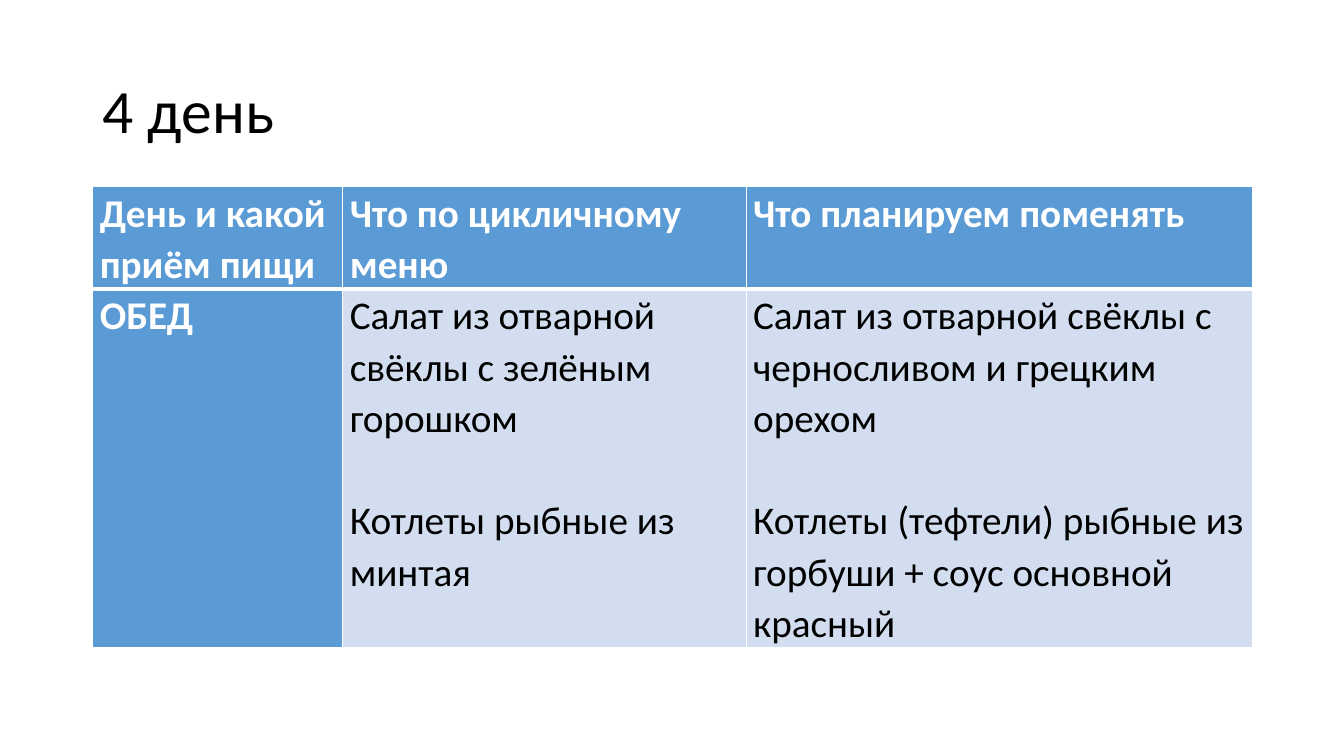
from lxml.etree import SubElement
from pptx import Presentation
from pptx.dml.color import RGBColor as RGB
from pptx.enum.text import MSO_ANCHOR as Anchor
from pptx.oxml.ns import qn
from pptx.util import Inches, Pt

TITLE = "4 день"
ROWS = [
    [["День и какой приём пищи"], ["Что по цикличному меню"], ["Что планируем поменять"]],
    [
        ["ОБЕД"],
        ["Салат из отварной свёклы с зелёным горошком", "Котлеты рыбные из минтая"],
        [
            "Салат из отварной свёклы с черносливом и грецким орехом",
            "Котлеты (тефтели) рыбные из горбуши + соус основной красный",
        ],
    ],
]
WIDTHS = [2.48, 4, 5.02]
HEIGHTS = [1.02, 3.55]
LEFT, TOP = 0.92, 1.85
COLORS = {"head": "5B9BD5", "body": "D2DEEF", "white": "FFFFFF", "black": "000000"}


def write(frame, lines, size=28, color="black", bold=False, space=1.07, gap=0):
    frame.word_wrap = True
    for i, line in enumerate(lines):
        para = frame.add_paragraph() if i else frame.paragraphs[0]
        para.line_spacing = space
        para.space_before = Pt(gap if i else 0)
        run = para.add_run()
        run.text = line
        font = run.font
        font.name, font.size, font.bold = "Calibri", Pt(size), bold
        font.color.rgb = RGB.from_string(COLORS[color])


def border(cell, sides):
    props = cell._tc.get_or_add_tcPr()
    for i, (side, width) in enumerate(sides.items()):
        line = SubElement(props, qn(f"a:ln{side}"), w=str(Pt(width)))
        fill = SubElement(line, qn("a:solidFill"))
        SubElement(fill, qn("a:srgbClr"), val=COLORS["white"])
        props.insert(i, line)


def main():
    deck = Presentation()
    deck.slide_width, deck.slide_height = Inches(13.33), Inches(7.5)
    slide = deck.slides.add_slide(deck.slide_layouts[6])

    title = slide.shapes.add_textbox(Inches(LEFT), Inches(0.4), Inches(11.5), Inches(1.45))
    title.text_frame.vertical_anchor = Anchor.MIDDLE
    write(title.text_frame, [TITLE], size=44, space=0.9)

    table = slide.shapes.add_table(
        len(ROWS), len(WIDTHS), Inches(LEFT), Inches(TOP),
        Inches(sum(WIDTHS)), Inches(sum(HEIGHTS)),
    ).table
    for col, width in zip(table.columns, WIDTHS):
        col.width = Inches(width)
    for row, height in zip(table.rows, HEIGHTS):
        row.height = Inches(height)

    for r, row in enumerate(ROWS):
        for c, lines in enumerate(row):
            cell = table.cell(r, c)
            head = r == 0 or c == 0
            cell.margin_left = cell.margin_right = Inches(0.07)
            cell.margin_top = cell.margin_bottom = 0
            cell.fill.solid()
            cell.fill.fore_color.rgb = RGB.from_string(COLORS["head" if head else "body"])
            write(cell.text_frame, lines, color="white" if head else "black", bold=head, gap=36.6)
            border(cell, {"L": 1, "R": 1, "T": 3 if r else 1, "B": 1 if r else 3})

    deck.save("out.pptx")


if __name__ == "__main__":
    main()
